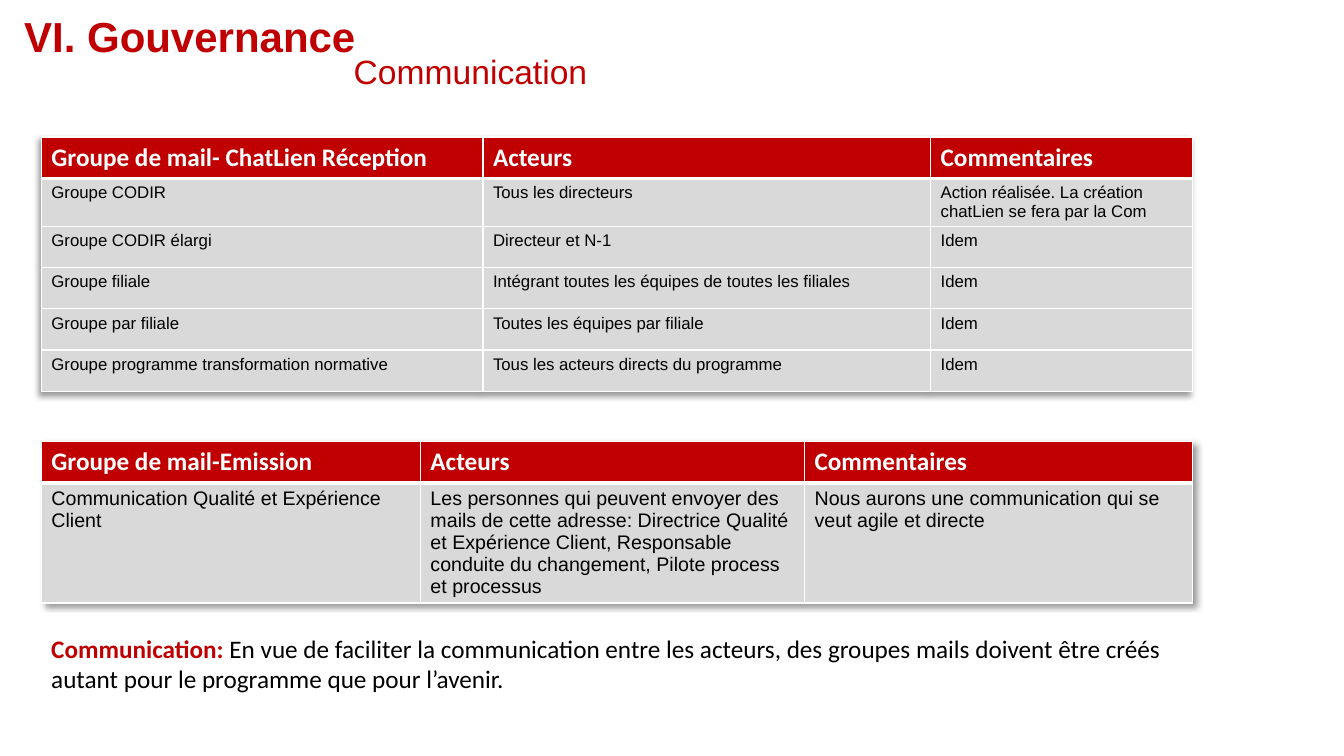
from lxml import etree
from pptx import Presentation
from pptx import util as u
from pptx.dml.color import RGBColor
from pptx.enum import shapes, text
from pptx.oxml import parse_xml

RED, GREY, WHITE, BLACK = "C00000", "D9D9D9", "FFFFFF", "000000"
NS = "http://schemas.openxmlformats.org/drawingml/2006/main"

# Content
TITLE = "VI. Gouvernance"
TOPIC = "Communication"
NOTE = ("Communication: ",
        "En vue de faciliter la communication entre les acteurs, des groupes "
        "mails doivent être créés autant pour le programme que pour l’avenir.")
TABLES = [
    {"box": (0.41, 1.36, 11.42, 2.62), "cols": (4.38, 4.44, 2.6),
     "size": 12, "angle": 135, "rows": [
         ("Groupe de mail- ChatLien Réception", "Acteurs", "Commentaires"),
         ("Groupe CODIR", "Tous les directeurs",
          "Action réalisée. La création chatLien se fera par la Com"),
         ("Groupe CODIR élargi", "Directeur et N-1", "Idem"),
         ("Groupe filiale",
          "Intégrant toutes les équipes de toutes les filiales", "Idem"),
         ("Groupe par filiale", "Toutes les équipes par filiale", "Idem"),
         ("Groupe programme transformation normative",
          "Tous les acteurs directs du programme", "Idem")]},
    {"box": (0.41, 4.38, 11.42, 1.67), "cols": (3.76, 3.81, 3.85),
     "size": 14, "angle": 45, "rows": [
         ("Groupe de mail-Emission", "Acteurs", "Commentaires"),
         ("Communication Qualité et Expérience Client",
          "Les personnes qui peuvent envoyer des mails de cette adresse: "
          "Directrice Qualité et Expérience Client, Responsable conduite du "
          "changement, Pilote process et processus",
          "Nous aurons une communication qui se veut agile et directe")]},
]
ROW = 0.41


def paint(item, color):
    item.rgb = RGBColor.from_string(color)


def fill(item, color):
    item.fill.solid()
    paint(item.fill.fore_color, color)


def write(para, words, color, **form):
    run = para.add_run()
    run.text = words
    for key, val in form.items():
        setattr(run.font, key, val)
    paint(run.font.color, color)


def place(shape, box):
    for key, val in zip(("left", "top", "width", "height"), box):
        setattr(shape, key, u.Inches(val))


def setup(frame):
    form = {"word_wrap": True, "auto_size": text.MSO_AUTO_SIZE.NONE,
            "vertical_anchor": text.MSO_ANCHOR.TOP}
    for key, val in form.items():
        setattr(frame, key, val)
    para = frame.paragraphs[0]
    para.alignment = text.PP_ALIGN.LEFT
    return para


def edge(cell, side, width):
    line = etree.SubElement(cell._tc.get_or_add_tcPr(), f"{{{NS}}}ln{side}",
                            w=str(u.Pt(width)))
    solid = etree.SubElement(line, f"{{{NS}}}solidFill")
    etree.SubElement(solid, f"{{{NS}}}srgbClr", val=WHITE)


def shade(table, angle):
    table._tbl.tblPr.insert(0, parse_xml(
        f'<a:effectLst xmlns:a="{NS}"><a:outerShdw blurRad="50800" '
        f'dist="38100" dir="{angle * 60000}" algn="t" rotWithShape="0">'
        '<a:srgbClr val="000000"><a:alpha val="40000"/></a:srgbClr>'
        '</a:outerShdw></a:effectLst>'))


def grid(slide, data):
    rows = data["rows"]
    frame = slide.shapes.add_table(len(rows), len(data["cols"]),
                                   *map(u.Inches, data["box"]))
    table = frame.table
    table.horz_banding = False
    shade(table, data["angle"])
    for col, width in zip(table.columns, data["cols"]):
        col.width = u.Inches(width)
    for r, row in enumerate(rows):
        table.rows[r].height = u.Inches(ROW)
        head = r == 0
        for c, words in enumerate(row):
            cell = table.cell(r, c)
            # Thick rule between the heading and the first row
            for side, width in (("L", 1), ("R", 1), ("T", 3 if r == 1 else 1),
                                ("B", 3 if head else 1)):
                edge(cell, side, width)
            fill(cell, RED if head else GREY)
            write(cell.text_frame.paragraphs[0], words,
                  WHITE if head else BLACK, bold=head,
                  name="Calibri" if head else "Arial",
                  size=u.Pt(18 if head else data["size"]))
    place(frame, data["box"])


def main():
    deck = Presentation()
    deck.slide_width, deck.slide_height = u.Inches(13.33), u.Inches(7.5)
    slide = deck.slides.add_slide(deck.slide_layouts[5])

    # Title and topic
    title = slide.shapes.title
    place(title, (0.14, 0.11, 8.52, 0.56))
    topic = slide.shapes.add_textbox(
        *map(u.Inches, (3.41, 0.5, 4.3, 0.46)))
    for box, words, size, bold in ((title, TITLE, 30, True),
                                   (topic, TOPIC, 24, False)):
        para = setup(box.text_frame)
        para.line_spacing = 0.9
        write(para, words, RED, name="Arial", size=u.Pt(size), bold=bold)

    # Tables
    for data in TABLES:
        grid(slide, data)

    # Closing note
    note = slide.shapes.add_shape(
        shapes.MSO_SHAPE.RECTANGLE,
        *map(u.Inches, (0.41, 6.23, 11.64, 0.71)))
    note.shadow.inherit = False
    fill(note, WHITE)
    note.line.fill.background()
    para = setup(note.text_frame)
    for words, color, bold in zip(NOTE, (RED, BLACK), (True, False)):
        write(para, words, color, name="Calibri", size=u.Pt(18), bold=bold)

    deck.save("out.pptx")


if __name__ == "__main__":
    main()
